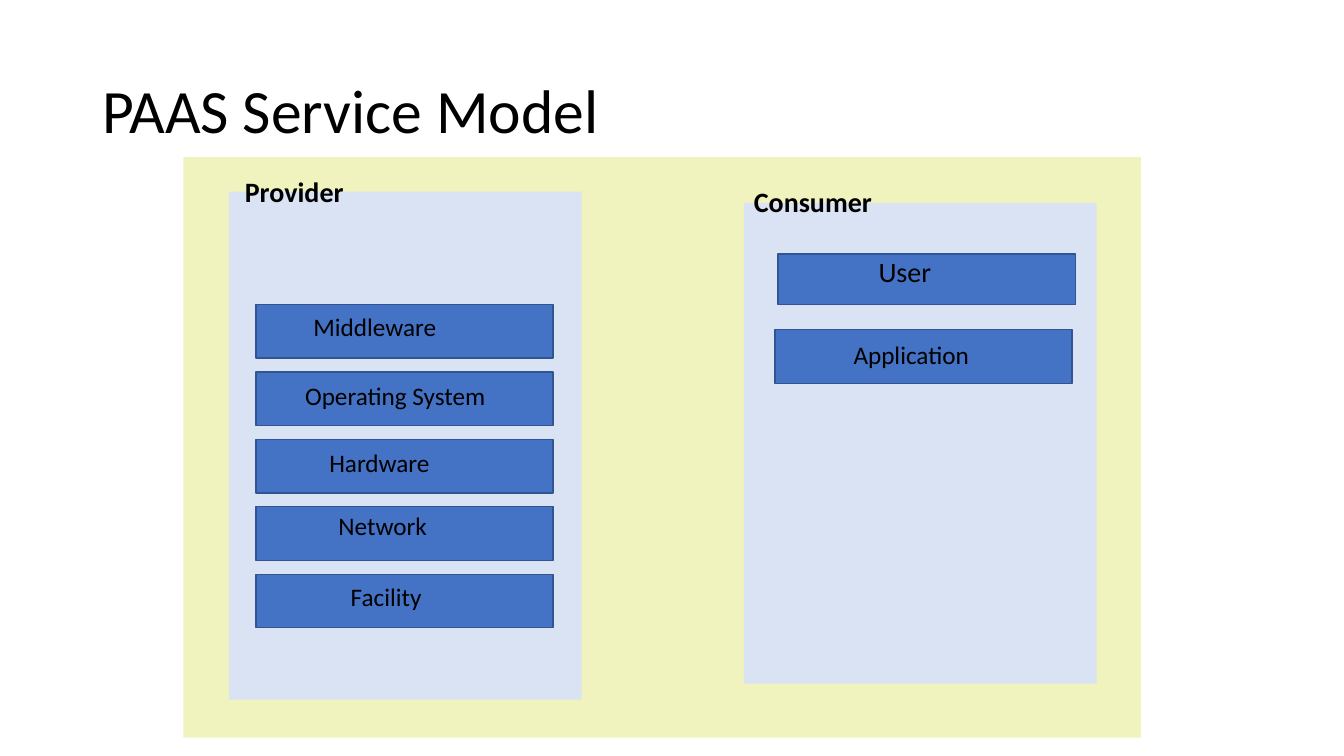
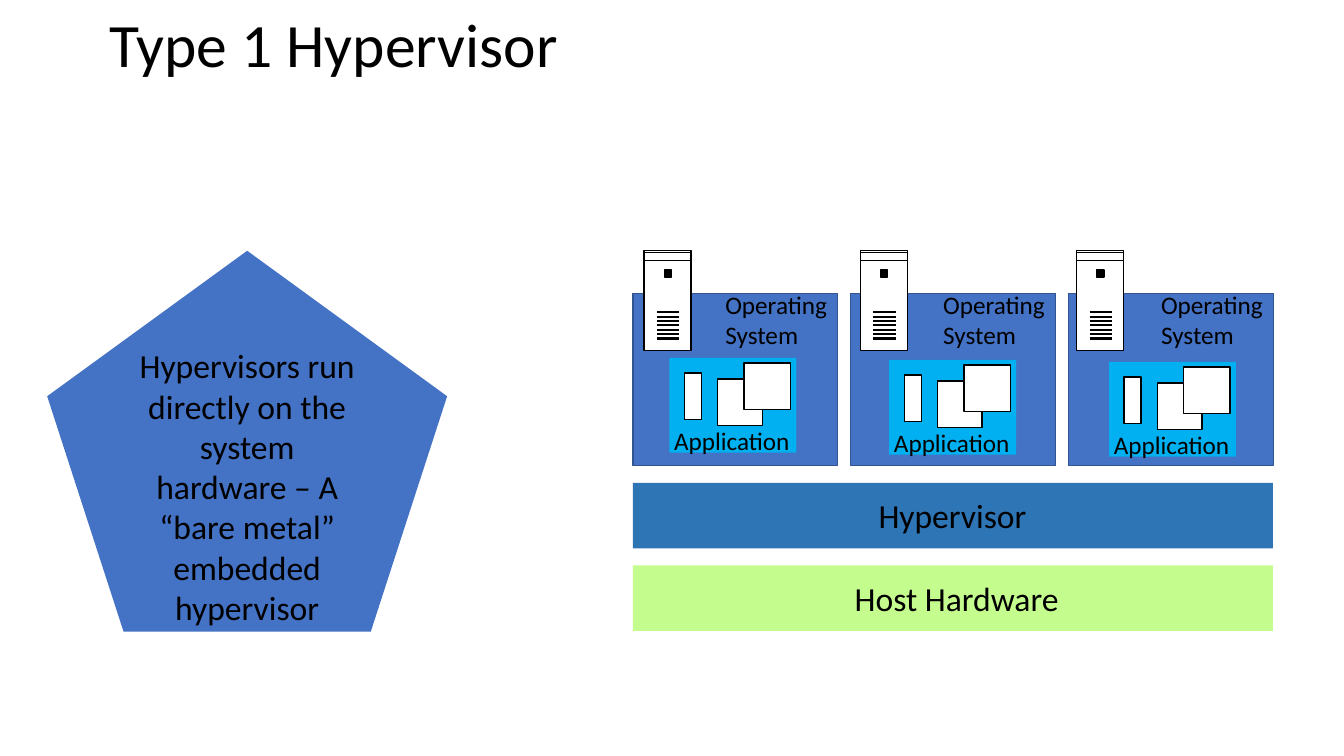
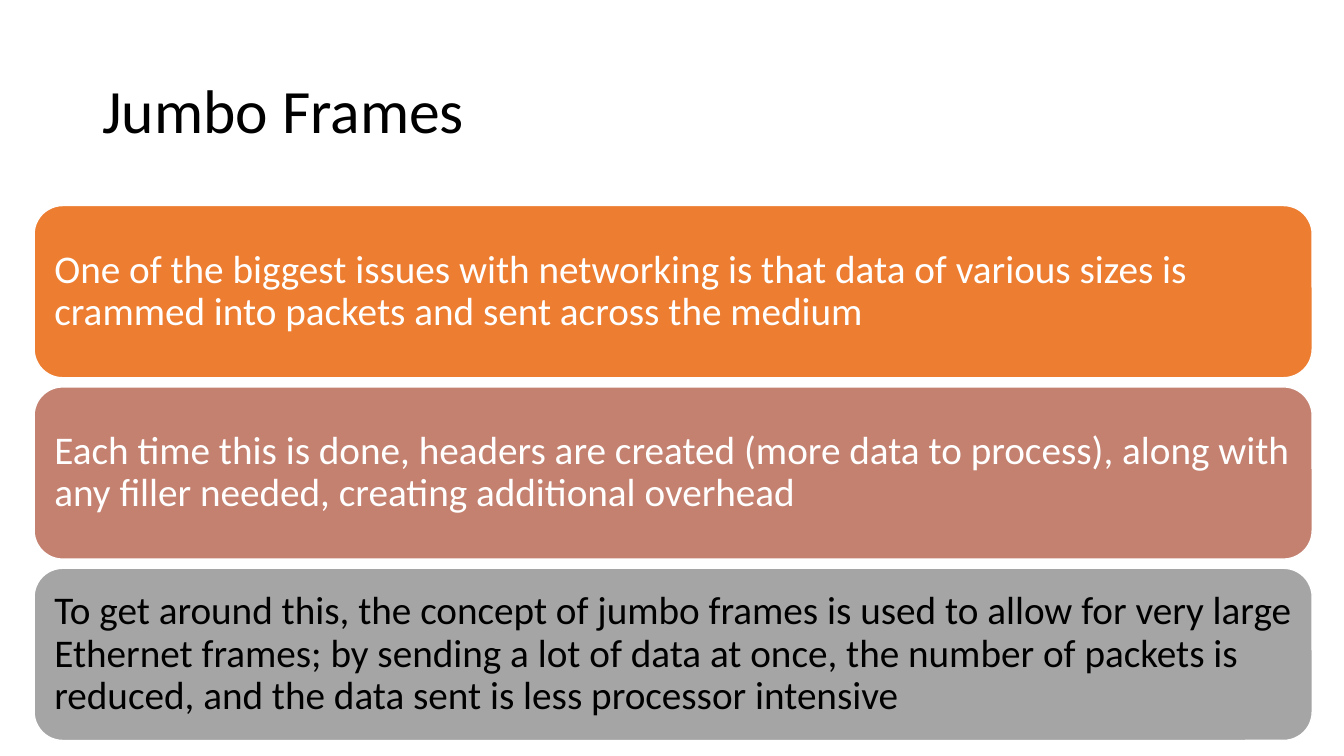
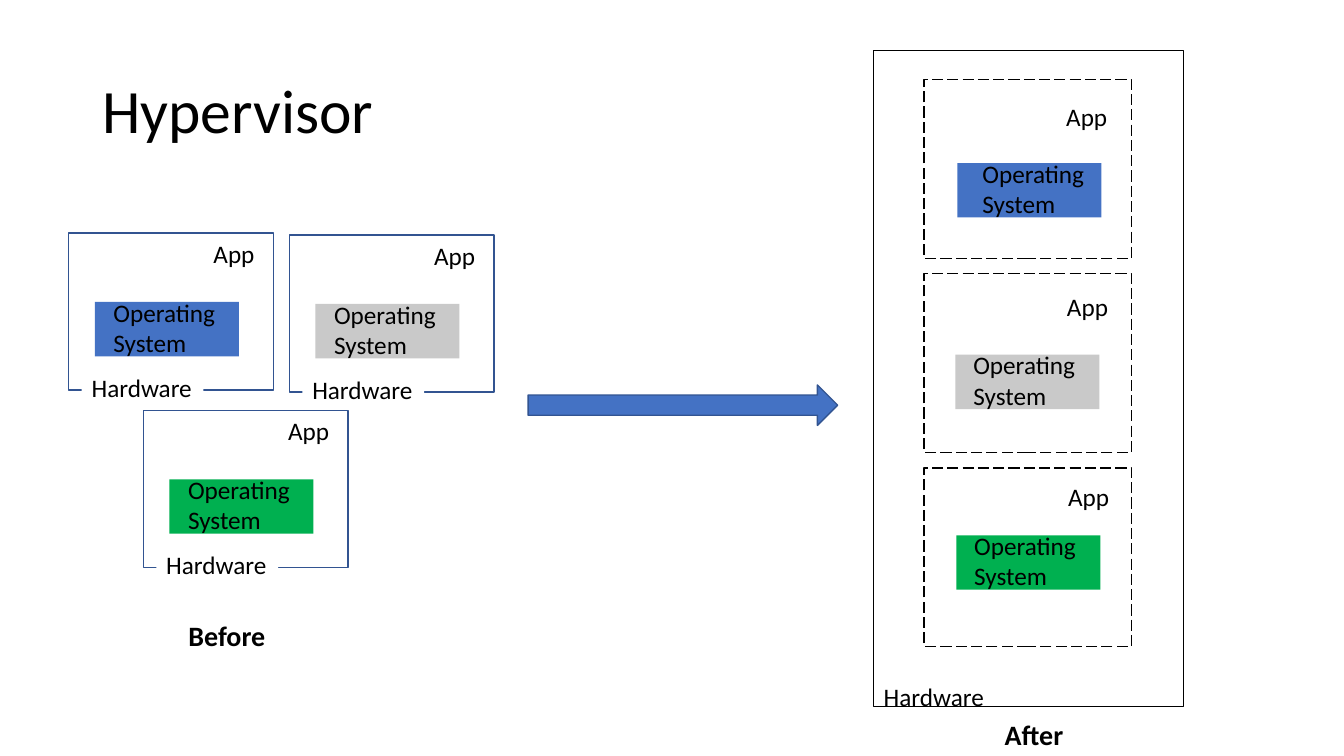
from lxml.etree import SubElement
from pptx import Presentation
from pptx.dml.color import RGBColor
from pptx.enum.dml import MSO_LINE
from pptx.enum.shapes import MSO_CONNECTOR, MSO_SHAPE
from pptx.enum.text import MSO_ANCHOR, MSO_AUTO_SIZE, PP_ALIGN
from pptx.oxml.ns import qn
from pptx.util import Cm, Pt

COLORS = {
    "black": "000000",
    "white": "FFFFFF",
    "blue": "4472C4",
    "navy": "325491",
    "pale_blue": "DAE3F3",
    "pale_yellow": "F0F3BD",
    "steel": "2E75B6",
    "lime": "C5FC8E",
    "sky": "00B0F0",
    "orange": "ED7D31",
    "rose": "C48170",
    "grey": "A5A5A5",
    "light_grey": "C9C9C9",
    "green": "00B050",
}


class Slides:
    font = "Calibri"
    title_size = 44
    label_size = 18
    heading_size = 20
    line_width = 1

    def __init__(self):
        self.deck = Presentation()
        self.deck.slide_width = Cm(33.87)
        self.deck.slide_height = Cm(19.05)
        self.page = None

    def color(self, name):
        return RGBColor.from_string(COLORS[name])

    def set_text(self, shape, text, size, color="black", bold=False,
                 align=PP_ALIGN.LEFT, spacing=None):
        shape.text_frame.text = text
        for para in shape.text_frame.paragraphs:
            para.alignment = align
            para.line_spacing = spacing
            for span in para.runs:
                span.font.name = self.font
                span.font.size = Pt(size)
                span.font.bold = bold
                span.font.color.rgb = self.color(color)

    def new_page(self, title, left=2.33, top=1.02, width=29.21):
        self.page = self.deck.slides.add_slide(self.deck.slide_layouts[6])
        box = self.page.shapes.add_textbox(Cm(left), Cm(top), Cm(width), Cm(3.68))
        box.text_frame.word_wrap = True
        box.text_frame.vertical_anchor = MSO_ANCHOR.MIDDLE
        self.set_text(box, title, self.title_size, spacing=0.9)

    def box(self, left, top, width, height, fill=None, line=None,
            kind=MSO_SHAPE.RECTANGLE, dash=None):
        shape = self.page.shapes.add_shape(
            kind, Cm(left), Cm(top), Cm(width), Cm(height))
        shape.shadow.inherit = False
        if fill:
            shape.fill.solid()
            shape.fill.fore_color.rgb = self.color(fill)
        else:
            shape.fill.background()
        if line:
            shape.line.color.rgb = self.color(line)
            shape.line.width = Pt(self.line_width)
            if dash:
                shape.line.dash_style = dash
        else:
            shape.line.fill.background()
        return shape

    def label(self, text, left, top, width, size=label_size, bold=False, fill=None):
        lines = text.count("\n") + 1
        height = round(lines * size * 0.043 + 0.25, 2)
        box = self.page.shapes.add_textbox(Cm(left), Cm(top), Cm(width), Cm(height))
        box.text_frame.word_wrap = False
        box.text_frame.auto_size = MSO_AUTO_SIZE.SHAPE_TO_FIT_TEXT
        if fill:
            box.fill.solid()
            box.fill.fore_color.rgb = self.color(fill)
        self.set_text(box, text, size, bold=bold)

    def heading(self, text, left, top, width):
        self.label(text, left, top, width, self.heading_size, bold=True)

    def rule(self, left, right, top):
        line = self.page.shapes.add_connector(
            MSO_CONNECTOR.STRAIGHT, Cm(left), Cm(top), Cm(right), Cm(top))
        line.line.color.rgb = self.color("black")
        line.line.width = Pt(1.5)
        SubElement(line._element.spPr, qn("a:effectLst"))

    def layer(self, left, top, height=1.35):
        self.box(left, top, 7.49, height, "blue", "navy")

    def server(self, left, top):
        self.box(left, top, 1.19, 2.51, "white", "black")
        for index in range(7):
            self.rule(left + 0.33, left + 0.89, top + 1.55 + index * 0.11)
        self.box(left + 0.51, top + 0.48, 0.18, 0.18, "black", "black")
        self.box(left, top + 0.05, 1.19, 0.2, "white", "black")

    def application(self, left, top):
        self.box(left, top, 3.2, 2.39, "sky")
        for across, down, width in ((1.22, 0.53, 1.12), (1.88, 0.13, 1.17),
                                    (0.38, 0.38, 0.43)):
            self.box(left + across, top + down, width, 1.17, "white", "black")
        self.label("Application", left - 0.13, top + 1.57, 3.45)

    def system_label(self, left, top):
        self.label("Operating\nSystem", left, top, 3.1)

    def system(self, left, top, fill, indent=0.22):
        self.box(left, top, 3.63, 1.37, fill)
        self.system_label(left + indent, top - 0.25)

    def app_label(self, left, top):
        self.label("App", left, top, 1.55)

    def machine(self, left, top, fill):
        self.box(left, top, 5.16, 3.96, "white", "navy")
        self.label("Hardware", left + 0.33, top + 3.38, 3.07, fill="white")
        self.system(left + 0.66, top + 1.74, fill)
        self.app_label(left + 3.4, top)

    def panel(self, text, top, fill, color):
        shape = self.box(0.86, top, 32.21, 4.34, fill, "white",
                         MSO_SHAPE.ROUNDED_RECTANGLE)
        frame = shape.text_frame
        frame.word_wrap = True
        frame.vertical_anchor = MSO_ANCHOR.MIDDLE
        frame.margin_left = frame.margin_right = Cm(0.3)
        frame.margin_top = frame.margin_bottom = Cm(0.3)
        self.set_text(shape, text, 28, color, spacing=0.9)


def service_model(slides):
    slides.new_page("PAAS Service Model")
    slides.box(4.62, 3.96, 24.13, 14.63, "pale_yellow")
    slides.box(18.75, 5.11, 8.89, 12.12, "pale_blue")
    slides.heading("Consumer", 18.75, 4.52, 4.93)
    slides.layer(19.61, 6.4, 1.27)
    slides.label("User", 21.89, 6.3, 2.59, slides.heading_size)
    slides.layer(19.53, 8.31)
    slides.label("Application", 21.26, 8.43, 3.84)
    slides.box(5.77, 4.83, 8.89, 12.8, "pale_blue")
    slides.heading("Provider", 5.92, 4.27, 4.24)
    layers = (
        ("Middleware", 7.65, 7.72, 5.11),
        ("Operating System", 7.44, 9.45, 5.51),
        ("Hardware", 8.05, 11.15, 4.29),
        ("Network", 8.28, 12.73, 3.86),
        ("Facility", 8.59, 14.53, 3.23),
    )
    for index, (text, left, top, width) in enumerate(layers):
        slides.layer(6.45, 7.67 + index * 1.7)
        slides.label(text, left, top, width)


def type_one(slides):
    slides.new_page("Type 1 Hypervisor", 2.51, -0.64, 32.21)
    pentagon = slides.box(1.19, 6.32, 10.08, 9.6, "blue",
                          kind=MSO_SHAPE.REGULAR_PENTAGON)
    pentagon.text_frame.word_wrap = True
    pentagon.text_frame.vertical_anchor = MSO_ANCHOR.MIDDLE
    slides.set_text(pentagon, "Hypervisors run directly on the system hardware – "
                    "A “bare metal” embedded hypervisor", 24,
                    align=PP_ALIGN.CENTER)
    for index in range(3):
        slides.box(15.95 + index * 5.49, 7.39, 5.16, 4.34, "blue", "navy")
        slides.application(16.87 + index * 5.54, 9.02 + index * 0.05)
        slides.system_label(18.03 + index * 5.49, 7.16)
        slides.server(16.23 + index * 5.45, 6.32)
    slides.box(15.95, 12.17, 16.13, 1.65, "steel")
    slides.label("Hypervisor", 21.89, 12.34, 4.72, 24)
    slides.box(15.95, 14.25, 16.13, 1.65, "lime")
    slides.label("Host Hardware", 21.29, 14.45, 6.1, 24)


def jumbo_frames(slides):
    slides.new_page("Jumbo Frames")
    panels = (
        ("One of the biggest issues with networking is that data of various sizes "
         "is crammed into packets and sent across the medium", "orange", "white"),
        ("Each time this is done, headers are created (more data to process), "
         "along with any filler needed, creating additional overhead",
         "rose", "white"),
        ("To get around this, the concept of jumbo frames is used to allow for "
         "very large Ethernet frames; by sending a lot of data at once, the number "
         "of packets is reduced, and the data sent is less processor intensive",
         "grey", "black"),
    )
    for index, (text, fill, color) in enumerate(panels):
        slides.panel(text, 5.18 + index * 4.57, fill, color)


def hypervisor(slides):
    slides.new_page("Hypervisor")
    for left, top, fill in ((1.73, 5.87, "blue"), (3.61, 10.34, "green"),
                            (7.29, 5.92, "light_grey")):
        slides.machine(left, top, fill)
    slides.heading("Before", 4.5, 15.47, 2.46)
    slides.box(13.31, 9.7, 7.8, 1.02, "blue", "navy", MSO_SHAPE.RIGHT_ARROW)
    slides.box(22.02, 1.27, 7.8, 16.54, line="black")
    slides.label("Hardware", 22.02, 17.04, 3.07)
    guests = (
        ("blue", 24.13, 4.11, 0.38, 26.62, 2.44),
        ("light_grey", 24.08, 8.94, 0.2, 26.64, 7.21),
        ("green", 24.1, 13.49, 0.2, 26.67, 12.01),
    )
    for index, (fill, left, top, indent, app_left, app_top) in enumerate(guests):
        slides.box(23.29, 2.01 + index * 4.89, 5.23, 4.5, line="black",
                   dash=MSO_LINE.LONG_DASH)
        slides.system(left, top, fill, indent)
        slides.app_label(app_left, app_top)
    slides.heading("After", 25.07, 17.96, 2.03)


def main():
    slides = Slides()
    service_model(slides)
    type_one(slides)
    jumbo_frames(slides)
    hypervisor(slides)
    slides.deck.save("out.pptx")


if __name__ == "__main__":
    main()
